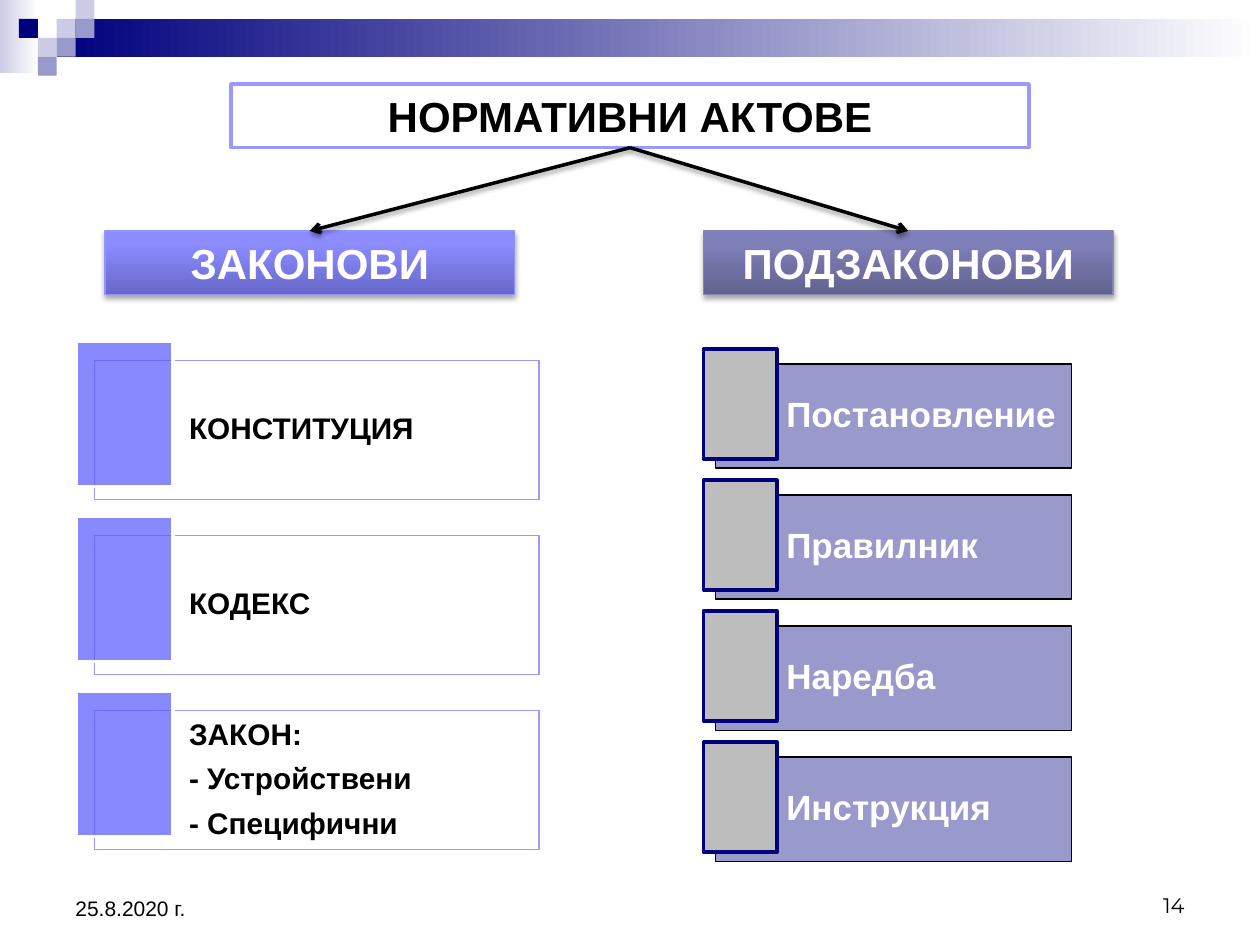
from dataclasses import dataclass

import pptx
import pptx.dml.color
import pptx.enum.shapes
import pptx.enum.text
import pptx.oxml.ns
import pptx.util
from lxml import etree

Pt = pptx.util.Pt
qn = pptx.oxml.ns.qn
Align = pptx.enum.text.PP_ALIGN
Anchor = pptx.enum.text.MSO_ANCHOR


@dataclass
class Box:
    left: float
    top: float
    width: float
    height: float

    def moved_down(self, distance: float) -> "Box":
        return Box(self.left, self.top + distance, self.width, self.height)

    def lengths(self) -> list:
        return [Pt(value) for value in (self.left, self.top, self.width, self.height)]


@dataclass
class Heading:
    text: str
    box: Box
    line: str
    line_width: float
    color: str
    stops: tuple = ()


@dataclass
class ActList:
    items: list
    panel: Box
    tab: Box
    pitch: float
    panel_fill: str
    panel_line: str
    tab_fill: str
    tab_alpha: int
    tab_line: str
    text_color: str
    text_size: float
    text_inset: float
    margin: float
    space_after: float


def rgb(value: str):
    return pptx.dml.color.RGBColor.from_string(value)


def add_rectangle(slide, box: Box, fill: str = "", alpha: int = 100, line: str = "", line_width: float = 0.75):
    shape = slide.shapes.add_shape(pptx.enum.shapes.MSO_SHAPE.RECTANGLE, *box.lengths())
    shape.shadow.inherit = False
    if fill:
        shape.fill.solid()
        shape.fill.fore_color.rgb = rgb(fill)
        if alpha < 100:
            color = shape._element.spPr.find(qn("a:solidFill"))[0]
            etree.SubElement(color, qn("a:alpha"), val=str(alpha * 1000))
    if line:
        shape.line.color.rgb = rgb(line)
        shape.line.width = Pt(line_width)
    else:
        shape.line.fill.background()
    return shape


def set_gradient(shape, stops: tuple, angle: float) -> None:
    shape.fill.gradient()
    shape.fill.gradient_angle = angle
    stop_list = shape._element.spPr.find(qn("a:gradFill")).find(qn("a:gsLst"))
    for stop in list(stop_list):
        stop_list.remove(stop)
    for position, color in stops:
        stop = etree.SubElement(stop_list, qn("a:gs"), pos=str(position * 1000))
        etree.SubElement(stop, qn("a:srgbClr"), val=color)


def add_shadow(effects, alpha: int, distance: float) -> None:
    shadow = etree.SubElement(
        effects, qn("a:outerShdw"), blurRad=str(Pt(3.1)), dist=str(Pt(distance)), dir="5400000", rotWithShape="0"
    )
    color = etree.SubElement(shadow, qn("a:srgbClr"), val="000000")
    etree.SubElement(color, qn("a:alpha"), val=str(alpha * 1000))


def write(shape, lines: list, size: float, color: str, bold: bool, align, anchor,
          font: str = "Arial", space_after: float = 0, line_spacing: float = 1.0) -> None:
    frame = shape.text_frame
    frame.word_wrap = True
    frame.vertical_anchor = anchor
    for index, text in enumerate(lines):
        paragraph = frame.add_paragraph() if index else frame.paragraphs[0]
        paragraph.alignment = align
        paragraph.space_after = Pt(space_after)
        paragraph.line_spacing = line_spacing
        run = paragraph.add_run()
        run.text = text
        run.font.name = font
        run.font.size = Pt(size)
        run.font.bold = bold
        run.font.color.rgb = rgb(color)


def add_banner(slide) -> None:
    for box, stops in (
        (Box(0, 0, 22, 42), ((0, "CCCCE6"), (100, "FFFFFF"))),
        (Box(32.4, 10.8, 687.6, 21.6), ((0, "00007D"), (100, "FFFFFF"))),
    ):
        set_gradient(add_rectangle(slide, box), stops, 0)
    cell = 10.8
    for column, row, color in (
        (3, 1, "CCCCE6"), (4, 0, "CCCCE6"), (4, 1, "9999CC"), (2, 2, "CCCCE6"),
        (1, 1, "00007D"), (3, 2, "9999CC"), (2, 3, "9999CC"),
    ):
        add_rectangle(slide, Box(column * cell, row * cell, cell, cell), color)


def add_heading(slide, heading: Heading) -> None:
    shape = add_rectangle(slide, heading.box, "FFFFFF", line=heading.line, line_width=heading.line_width)
    if heading.stops:
        set_gradient(shape, heading.stops, 90)
        add_shadow(shape._element.spPr.find(qn("a:effectLst")), 35, 1.8)
    write(shape, [heading.text], 24, heading.color, True, Align.CENTER, Anchor.TOP)


def add_act_list(slide, acts: ActList) -> None:
    for index, lines in enumerate(acts.items):
        drop = index * acts.pitch
        panel = add_rectangle(slide, acts.panel.moved_down(drop), acts.panel_fill, 40, acts.panel_line)
        frame = panel.text_frame
        frame.margin_left = Pt(acts.text_inset)
        frame.margin_top = frame.margin_right = frame.margin_bottom = Pt(acts.margin)
        write(panel, lines, acts.text_size, acts.text_color, True, Align.LEFT, Anchor.MIDDLE,
              space_after=acts.space_after, line_spacing=0.9)
        add_rectangle(slide, acts.tab.moved_down(drop), acts.tab_fill, acts.tab_alpha, acts.tab_line, 2)


def add_arrow(slide, start: tuple, end: tuple) -> None:
    points = [Pt(value) for value in (*start, *end)]
    connector = slide.shapes.add_connector(pptx.enum.shapes.MSO_CONNECTOR.STRAIGHT, *points)
    connector.line.color.rgb = rgb("000000")
    connector.line.width = Pt(2)
    properties = connector._element.spPr
    etree.SubElement(properties.find(qn("a:ln")), qn("a:tailEnd"), type="arrow")
    add_shadow(etree.SubElement(properties, qn("a:effectLst")), 38, 1.6)


def add_footer(slide, box: Box, text: str, font: str, align) -> None:
    shape = slide.shapes.add_textbox(*box.lengths())
    write(shape, [text], 12, "000000", False, align, Anchor.BOTTOM, font)


def main() -> None:
    presentation = pptx.Presentation()
    presentation.slide_width, presentation.slide_height = Pt(720), Pt(540)
    slide = presentation.slides.add_slide(presentation.slide_layouts[6])
    add_banner(slide)
    add_footer(slide, Box(516, 492, 168, 36), "14", "Montserrat", Align.RIGHT)
    add_footer(slide, Box(36, 492, 168, 37.5), "25.8.2020 г.", "Arial", Align.LEFT)

    for heading in (
        Heading("НОРМАТИВНИ АКТОВЕ", Box(132, 48, 456, 36.4), "9999FF", 2, "000000"),
        Heading("ЗАКОНОВИ", Box(60, 132, 234, 36.4), "9393FC", 0.75, "FFFFFF",
                ((0, "6767CA"), (80, "8C8CFF"), (100, "8E8EFF"))),
        Heading("ПОДЗАКОНОВИ", Box(402, 132, 234, 36.4), "8686B6", 0.75, "FFFFFF",
                ((0, "62628F"), (80, "7F7FBA"), (100, "7E7EBC"))),
    ):
        add_heading(slide, heading)

    add_act_list(slide, ActList(
        [["КОНСТИТУЦИЯ"], ["КОДЕКС"], ["ЗАКОН:", "- Устройствени", "- Специфични"]],
        Box(54, 206, 254, 79.5), Box(43.5, 195, 55.5, 83), 100,
        "FFFFFF", "9999FF", "5858FF", 70, "FFFFFF", "000000", 17, 54, 5, 7))
    for target in (177, 519):
        add_arrow(slide, (360, 84.4), (target, 132))
    add_act_list(slide, ActList(
        [["Постановление"], ["Правилник"], ["Наредба"], ["Инструкция"]],
        Box(409, 208, 203.5, 59.5), Box(402, 199.5, 42, 62.75), 74.88,
        "00007D", "000000", "BDBDBD", 100, "00007D", "FFFFFF", 20, 40.3, 5.5, 8))
    presentation.save("out.pptx")


if __name__ == "__main__":
    main()
